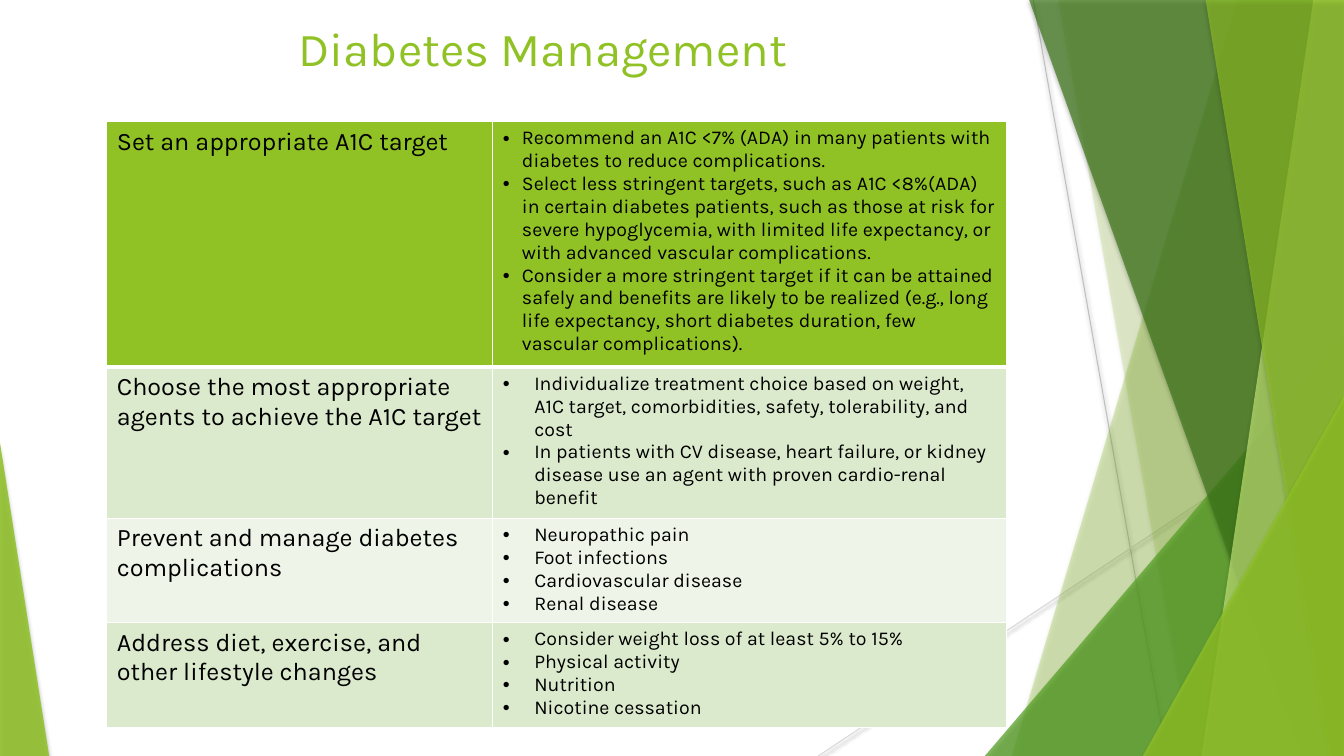
import pptx
import pptx.util
import pptx.dml.color
import pptx.enum.shapes
import pptx.enum.text
import pptx.oxml
import pptx.oxml.ns
from pptx.util import Cm

WIDTH, HEIGHT = 33.87, 19.05
FONT = "Karla"
LIME, GREEN, DARK_GREEN, PALE_LIME = "90C226", "54A021", "3F7819", "C0E474"
BLACK, WHITE = "000000", "FFFFFF"
NAMESPACE = pptx.oxml.ns.nsdecls("a")

# Thin lines: start x, start y, end x, end y, colour
LINES = [(26.04, 0, 29.41, HEIGHT, "BFBFBF"),
         (WIDTH, 10.24, 20.62, HEIGHT, "D9D9D9")]

# Bands reaching the right edge: x at the top, x at the bottom, colour, opacity
BACK_BANDS = [(31.19, 25.5, LIME, 30), (26.67, 30.02, LIME, 20)]
FRONT_BANDS = [(25.93, 32.79, DARK_GREEN, 70),
               (33.1, 30.28, PALE_LIME, 70),
               (30.38, 33.48, LIME, 65)]

# Table rows: height, fill, bullet indent, heading, bullet points
ROWS = [
    (6.02, LIME, 0.48, "Set an appropriate A1C target", [
        "Recommend an A1C <7% (ADA) in many patients with diabetes to reduce "
        "complications.",
        "Select less stringent targets, such as A1C <8%(ADA) in certain diabetes "
        "patients, such as those at risk for severe hypoglycemia, with limited life "
        "expectancy, or with advanced vascular complications.",
        "Consider a more stringent target if it can be attained safely and benefits "
        "are likely to be realized (e.g., long life expectancy, short diabetes "
        "duration, few vascular complications)."]),
    (3.71, "DBE9CC", 0.79,
     "Choose the most appropriate agents to achieve the A1C target", [
        "Individualize treatment choice based on weight, A1C target, comorbidities, "
        "safety, tolerability, and cost",
        "In patients with CV disease, heart failure, or kidney disease use an agent "
        "with proven cardio-renal benefit"]),
    (2.57, "EEF4E7", 0.79, "Prevent and manage diabetes complications", [
        "Neuropathic pain", "Foot infections", "Cardiovascular disease",
        "Renal disease"]),
    (2.57, "DBE9CC", 0.79, "Address diet, exercise, and other lifestyle changes", [
        "Consider weight loss of at least 5% to 15%", "Physical activity",
        "Nutrition", "Nicotine cessation"]),
]


def colour(value):
    return pptx.dml.color.RGBColor.from_string(value)


def add_shadow(shape, blur, distance, opacity):
    properties = shape._element.spPr
    for effects in properties.findall(pptx.oxml.ns.qn("a:effectLst")):
        properties.remove(effects)
    properties.append(pptx.oxml.parse_xml(
        f'<a:effectLst {NAMESPACE}><a:outerShdw blurRad="{pptx.util.Pt(blur)}" '
        f'dist="{pptx.util.Pt(distance)}" dir="5400000" rotWithShape="0">'
        f'<a:srgbClr val="{BLACK}"><a:alpha val="{opacity * 1000}"/></a:srgbClr>'
        '</a:outerShdw></a:effectLst>'))


def style_facet(shape, fill, opacity):
    shape.fill.solid()
    shape.fill.fore_color.rgb = colour(fill)
    shape.line.fill.background()
    solid = shape._element.spPr.find(pptx.oxml.ns.qn("a:solidFill"))
    solid[0].append(pptx.oxml.parse_xml(
        f'<a:alpha {NAMESPACE} val="{opacity * 1000}"/>'))
    shape.shadow.inherit = False
    add_shadow(shape, 3, 2, 35)


def add_line(slide, start_x, start_y, end_x, end_y, line_colour):
    line = slide.shapes.add_connector(
        pptx.enum.shapes.MSO_CONNECTOR.STRAIGHT,
        Cm(start_x), Cm(start_y), Cm(end_x), Cm(end_y))
    line.line.color.rgb = colour(line_colour)
    line.line.width = pptx.util.Pt(0.75)
    add_shadow(line, 3.1, 1.6, 38)


def add_band(slide, top_x, bottom_x, fill, opacity):
    builder = slide.shapes.build_freeform(Cm(top_x), Cm(-0.02))
    builder.add_line_segments([(Cm(WIDTH), Cm(-0.02)), (Cm(WIDTH), Cm(HEIGHT)),
                               (Cm(bottom_x), Cm(HEIGHT))])
    style_facet(builder.convert_to_shape(), fill, opacity)


def add_triangle(slide, left, top, width, apex, fill, opacity):
    triangle = slide.shapes.add_shape(
        pptx.enum.shapes.MSO_SHAPE.ISOSCELES_TRIANGLE,
        Cm(left), Cm(top), Cm(width), Cm(HEIGHT - top))
    triangle.adjustments[0] = apex
    style_facet(triangle, fill, opacity)


def add_run(paragraph, text, size, text_colour):
    run = paragraph.add_run()
    run.text = text
    run.font.name = FONT
    run.font.size = pptx.util.Pt(size)
    run.font.bold = False
    run.font.color.rgb = colour(text_colour)


def add_title(slide, text):
    box = slide.shapes.add_textbox(Cm(1.75), Cm(0.23), Cm(23.88), Cm(1.68))
    frame = box.text_frame
    frame.word_wrap = True
    frame.vertical_anchor = pptx.enum.text.MSO_ANCHOR.BOTTOM
    frame.margin_top = frame.margin_bottom = 0
    paragraph = frame.paragraphs[0]
    paragraph.alignment = pptx.enum.text.PP_ALIGN.CENTER
    add_run(paragraph, text, 33.8, LIME)


def add_bullet(paragraph, indent):
    properties = paragraph._p.get_or_add_pPr()
    properties.set("marL", str(Cm(indent)))
    properties.set("indent", str(-Cm(indent)))
    for element in (f'<a:buClr {NAMESPACE}><a:srgbClr val="{BLACK}"/></a:buClr>',
                    f'<a:buFont {NAMESPACE} typeface="Arial"/>',
                    f'<a:buChar {NAMESPACE} char="•"/>'):
        properties.append(pptx.oxml.parse_xml(element))


def style_cell(cell, fill, top_width, bottom_width):
    cell.fill.solid()
    cell.fill.fore_color.rgb = colour(fill)
    properties = cell._tc.get_or_add_tcPr()
    borders = {"lnL": 0.96, "lnR": 0.96, "lnT": top_width, "lnB": bottom_width}
    for position, (side, width) in enumerate(borders.items()):
        properties.insert(position, pptx.oxml.parse_xml(
            f'<a:{side} {NAMESPACE} w="{pptx.util.Pt(width)}"><a:solidFill>'
            f'<a:srgbClr val="{WHITE}"/></a:solidFill></a:{side}>'))


def add_plan_table(slide):
    column_widths = (9.73, 12.95)
    table = slide.shapes.add_table(
        len(ROWS), len(column_widths), Cm(2.69), Cm(3.07),
        Cm(sum(column_widths)), Cm(sum(row[0] for row in ROWS))).table
    for column, width in zip(table.columns, column_widths):
        column.width = Cm(width)
    for index, (height, fill, indent, heading, points) in enumerate(ROWS):
        table.rows[index].height = Cm(height)
        heading_cell, points_cell = table.rows[index].cells
        for cell in (heading_cell, points_cell):
            style_cell(cell, fill, 3 if index == 1 else 0.96, 3 if index == 0 else 0.96)
        add_run(heading_cell.text_frame.paragraphs[0], heading, 18, BLACK)
        frame = points_cell.text_frame
        for number, point in enumerate(points):
            paragraph = frame.add_paragraph() if number else frame.paragraphs[0]
            add_bullet(paragraph, indent)
            add_run(paragraph, point, 14, BLACK)


def main():
    presentation = pptx.Presentation()
    presentation.slide_width, presentation.slide_height = Cm(WIDTH), Cm(HEIGHT)
    slide = presentation.slides.add_slide(presentation.slide_layouts[6])

    # Faceted background, from back to front
    for line in LINES:
        add_line(slide, *line)
    for band in BACK_BANDS:
        add_band(slide, *band)
    add_triangle(slide, 24.82, 8.46, 9.05, 1, GREEN, 72)
    for band in FRONT_BANDS:
        add_band(slide, *band)
    add_triangle(slide, 28.8, 9.98, 5.07, 1, LIME, 80)
    add_triangle(slide, 0, 11.15, 1.24, 0, LIME, 85)

    # Content
    add_title(slide, "Diabetes Management")
    add_plan_table(slide)
    presentation.save("out.pptx")


if __name__ == "__main__":
    main()
